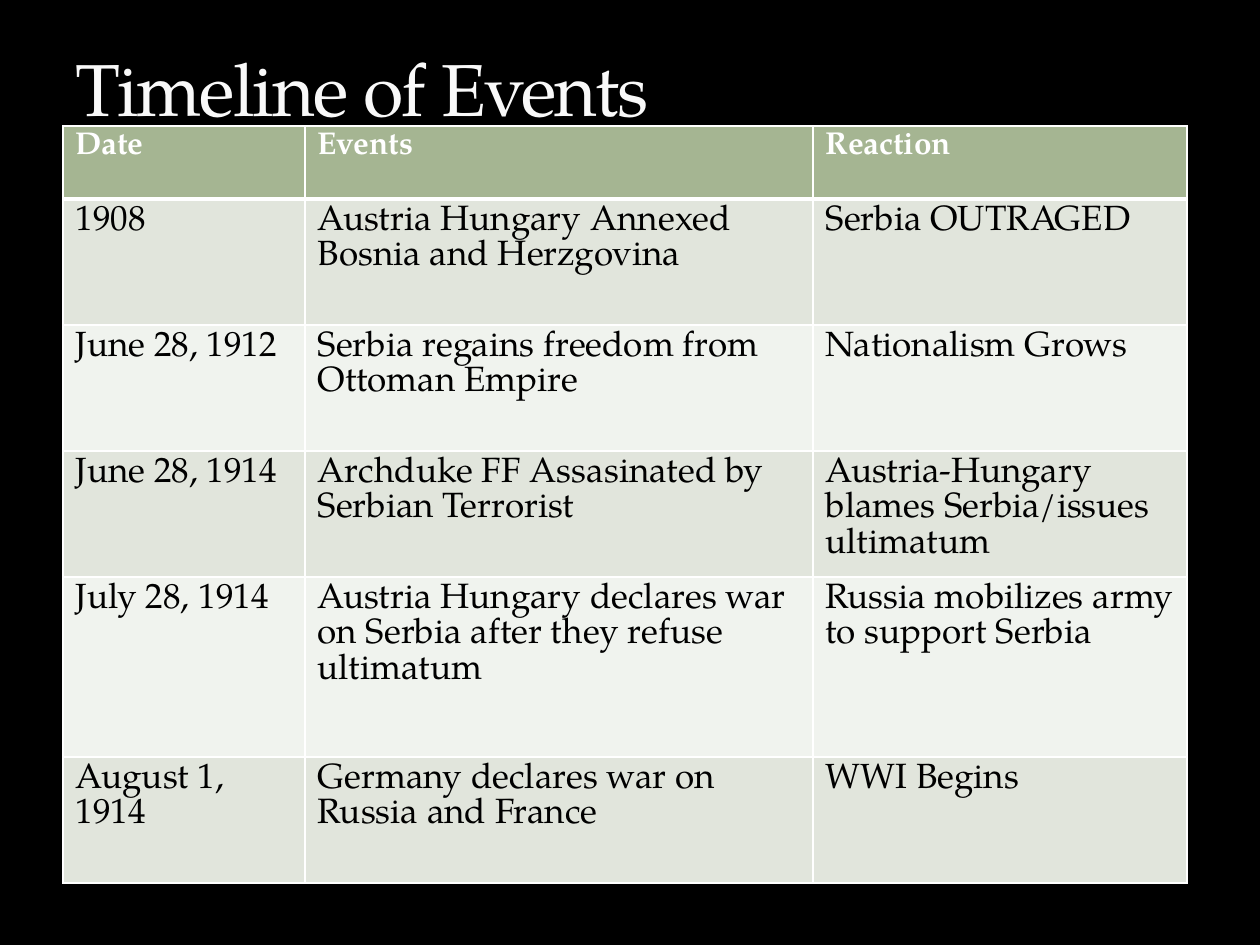
from dataclasses import dataclass

from lxml.etree import SubElement
from pptx import Presentation
from pptx.dml.color import RGBColor
from pptx.enum.text import MSO_ANCHOR, MSO_AUTO_SIZE, PP_ALIGN
from pptx.oxml import parse_xml
from pptx.oxml.ns import nsdecls, qn
from pptx.util import Cm, Pt


@dataclass(frozen=True)
class Theme:
    font: str = "TeX Gyre Pagella"
    background: str = "000000"
    title: str = "F9F9F9"
    title_outline: str = "3C4422"
    header_text: str = "FFFFFF"
    body_text: str = "000000"
    header_fill: str = "A5B592"
    band_fills: tuple = ("E1E5DC", "F0F3EE")
    border: str = "FFFFFF"
    title_size: int = 42
    header_size: int = 18
    body_size: int = 20
    border_width: int = 1
    header_rule_width: int = 3


COLUMN_WIDTHS = (4.88, 10.24, 7.54)
ROW_HEIGHTS = (1.47, 2.54, 2.54, 2.54, 3.63, 2.54)
EVENTS = (
    ("Date", "Events", "Reaction"),
    ("1908", "Austria Hungary Annexed Bosnia and Herzgovina", "Serbia OUTRAGED"),
    ("June 28, 1912", "Serbia regains freedom from Ottoman Empire", "Nationalism Grows"),
    ("June 28, 1914", "Archduke FF Assasinated by Serbian Terrorist",
     "Austria-Hungary blames Serbia/issues ultimatum"),
    ("July 28, 1914", "Austria Hungary declares war on Serbia after they refuse ultimatum",
     "Russia mobilizes army to support Serbia"),
    ("August 1, 1914", "Germany declares war on Russia and France", "WWI Begins"),
)


def write_text(text_frame, text, *, font, size, color, bold=False):
    """Put one formatted run in a text frame and return the run."""
    paragraph = text_frame.paragraphs[0]
    paragraph.alignment = PP_ALIGN.LEFT
    run = paragraph.add_run()
    run.text = text
    run.font.name = font
    run.font.size = Pt(size)
    run.font.bold = bold
    run.font.color.rgb = RGBColor.from_string(color)
    return run


class SlideBuilder:
    def __init__(self, slide, theme):
        self.slide = slide
        self.theme = theme

    def background(self):
        fill = self.slide.background.fill
        fill.solid()
        fill.fore_color.rgb = RGBColor.from_string(self.theme.background)

    def title(self, text, left, top, width, height):
        theme = self.theme
        title = self.slide.shapes.title
        title.left, title.top, title.width, title.height = map(Cm, (left, top, width, height))
        title.text_frame.vertical_anchor = MSO_ANCHOR.BOTTOM
        title.text_frame.auto_size = MSO_AUTO_SIZE.NONE
        run = write_text(title.text_frame, text, font=theme.font,
                         size=theme.title_size, color=theme.title)
        # Tight letter spacing and a faint outline
        properties = run.font._element
        properties.set("spc", "-100")
        properties.insert(0, parse_xml(
            f'<a:ln {nsdecls("a")} w="{Pt(0.25)}"><a:solidFill>'
            f'<a:srgbClr val="{theme.title_outline}"><a:alpha val="25000"/></a:srgbClr>'
            '</a:solidFill></a:ln>'))
        # The title lies in front of the table
        self.slide.shapes._spTree.append(title._element)

    def table(self, rows, left, top, column_widths, row_heights):
        frame = self.slide.shapes.add_table(
            len(rows), len(column_widths), Cm(left), Cm(top),
            Cm(sum(column_widths)), Cm(sum(row_heights)))
        table = frame.table
        for column, width in zip(table.columns, column_widths):
            column.width = Cm(width)
        for row, height in zip(table.rows, row_heights):
            row.height = Cm(height)
        for row_index, texts in enumerate(rows):
            for column_index, text in enumerate(texts):
                self.cell(table.cell(row_index, column_index), text, row_index)

    def cell(self, cell, text, row_index):
        theme = self.theme
        header = row_index == 0
        fill = theme.header_fill if header else theme.band_fills[(row_index - 1) % 2]
        self.borders(cell, row_index)
        cell.fill.solid()
        cell.fill.fore_color.rgb = RGBColor.from_string(fill)
        write_text(cell.text_frame, text, font=theme.font, bold=header,
                   size=theme.header_size if header else theme.body_size,
                   color=theme.header_text if header else theme.body_text)

    def borders(self, cell, row_index):
        theme = self.theme
        properties = cell._tc.get_or_add_tcPr()
        for side in "LRTB":
            # The thick rule is shared by the header and the first event
            thick = (row_index, side) in ((0, "B"), (1, "T"))
            width = theme.header_rule_width if thick else theme.border_width
            line = SubElement(properties, qn(f"a:ln{side}"), w=str(Pt(width)))
            fill = SubElement(line, qn("a:solidFill"))
            SubElement(fill, qn("a:srgbClr"), val=theme.border)


def main():
    presentation = Presentation()
    presentation.slide_width = Cm(25.4)
    presentation.slide_height = Cm(19.05)
    slide = presentation.slides.add_slide(presentation.slide_layouts[5])
    builder = SlideBuilder(slide, Theme())

    # Backdrop, table of events, heading
    builder.background()
    builder.table(EVENTS, 1.27, 2.54, COLUMN_WIDTHS, ROW_HEIGHTS)
    builder.title("Timeline of Events", 1.27, 0.43, 22.86, 2.34)

    presentation.save("out.pptx")


if __name__ == "__main__":
    main()
